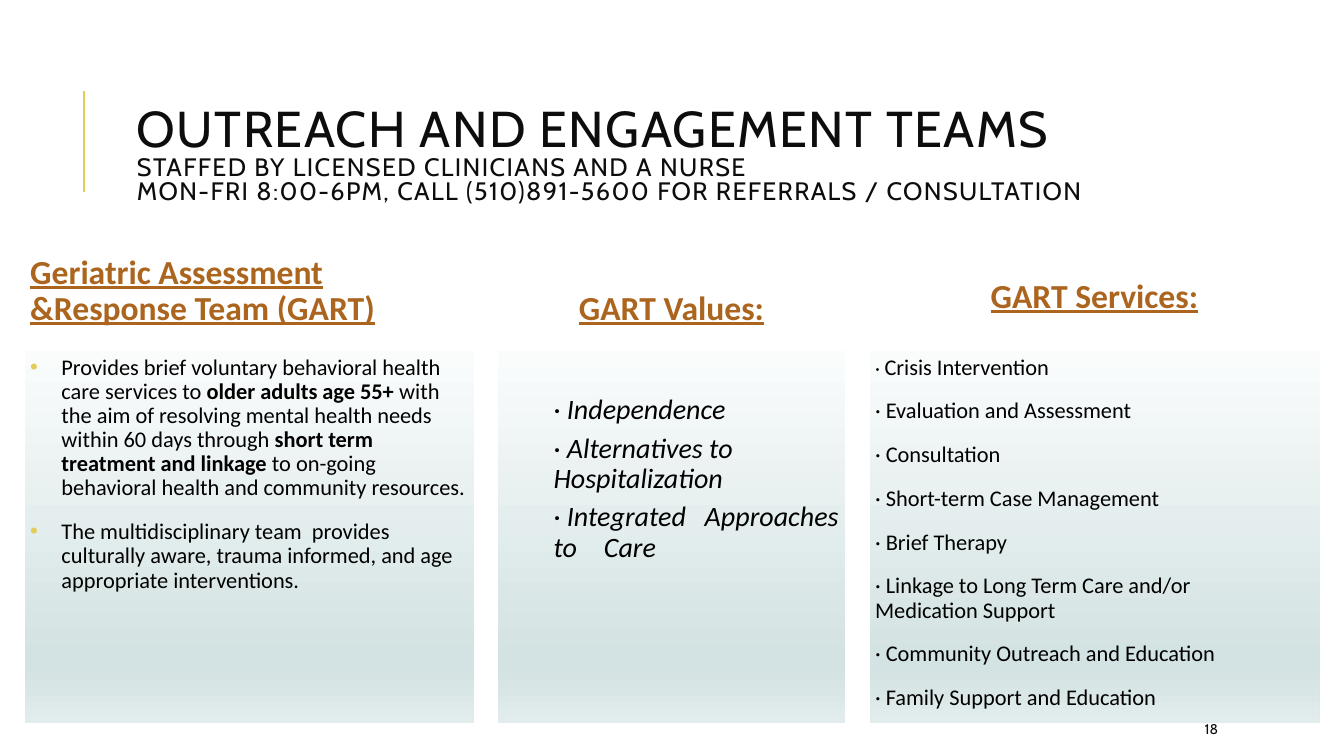
from lxml import etree
from pptx import Presentation
from pptx.dml.color import RGBColor
from pptx.enum.shapes import MSO_CONNECTOR, MSO_SHAPE
from pptx.enum.text import MSO_ANCHOR as Anchor, PP_ALIGN as Align
from pptx.oxml.ns import qn
from pptx.util import Inches, Pt

GOLD, BROWN, INK, BLACK = "E3CC5A", "AB651E", "0D0D0D", "000000"
PANEL_STOPS = [(0, "FAFCFC"), (83, "D3E2E2"), (85, "D3E2E2"), (100, "E2ECEC")]
PANEL_TOP, PANEL_HEIGHT = 3.48, 3.69

TEAM = [
    [("Provides brief voluntary behavioral health care services to ", False),
     ("older adults age 55+ ", True),
     ("with the aim of resolving mental health needs within 60 days through ", False),
     ("short term treatment and linkage", True),
     (" to on-going behavioral health and community resources.", False)],
    [("The multidisciplinary team  provides culturally aware, trauma informed, "
      "and age appropriate interventions.", False)],
]
VALUES = ["Independence", "Alternatives to  \tHospitalization",
          "Integrated \tApproaches to \tCare"]
SERVICES = ["Crisis Intervention", "Evaluation and Assessment", "Consultation",
            "Short-term Case Management", "Brief Therapy",
            "Linkage to Long Term Care and/or \tMedication Support",
            "Community Outreach and Education", "Family Support and Education"]


def color(value):
    return RGBColor.from_string(value)


def set_font(font, size, value, name="Calibri"):
    font.name, font.size = name, Pt(size)
    font.color.rgb = color(value)


def set_frame(frame, anchor, inset=None):
    frame.word_wrap = True
    frame.vertical_anchor = anchor
    if inset is not None:
        frame.margin_left = frame.margin_right = Inches(inset)
        frame.margin_top = frame.margin_bottom = Inches(inset)


def set_spacing(paragraph, before=12, after=2):
    paragraph.line_spacing = 0.9
    paragraph.space_before, paragraph.space_after = Pt(before), Pt(after)


def add_paragraphs(frame, count):
    """Yield the frame's first paragraph, then new ones, up to count."""
    yield frame.paragraphs[0]
    for _ in range(count - 1):
        yield frame.add_paragraph()


def add_text(slide, left, top, width, height, anchor, inset=None):
    box = slide.shapes.add_textbox(*map(Inches, (left, top, width, height)))
    set_frame(box.text_frame, anchor, inset)
    return box.text_frame


def add_title(slide, left, top, width, height):
    rule = slide.shapes.add_connector(
        MSO_CONNECTOR.STRAIGHT, Inches(left - 0.43), Inches(top + 1.33),
        Inches(left - 0.43), Inches(top + 0.33))
    rule.line.color.rgb = color(GOLD)
    rule.line.width = Pt(1.5)
    etree.SubElement(rule._element.spPr, qn("a:effectLst"))

    frame = add_text(slide, left, top, width, height, Anchor.MIDDLE)
    paragraph = frame.paragraphs[0]
    paragraph.line_spacing = 0.8
    lines = [("OUTREACH AND ENGAGEMENT TEAMS", 36),
             ("STAFFED BY LICENSED CLINICIANS AND A NURSE ", 18),
             ("MON-FRI 8:00-6PM, CALL (510)891-5600 FOR REFERRALS / CONSULTATION", 18)]
    for index, (text, size) in enumerate(lines):
        if index:
            paragraph.add_line_break()
        run = paragraph.add_run()
        run.text = text
        set_font(run.font, size, INK, "Cabin")
        run._r.get_or_add_rPr().set("spc", "100")


def add_heading(slide, text, left, top, width, height, align=Align.CENTER):
    frame = add_text(slide, left, top, width, height, Anchor.BOTTOM, 0.05)
    paragraph = frame.paragraphs[0]
    paragraph.text = text
    paragraph.alignment = align
    set_spacing(paragraph)
    set_font(paragraph.font, 24, BROWN)
    paragraph.font.bold = paragraph.font.underline = True


def add_panel(slide, left, width):
    """Add a gradient panel and return its text frame."""
    panel = slide.shapes.add_shape(
        MSO_SHAPE.RECTANGLE,
        *map(Inches, (left, PANEL_TOP, width, PANEL_HEIGHT)))
    panel.shadow.inherit = False
    panel.line.fill.background()
    panel.fill.gradient()
    panel.fill.gradient_angle = 270
    stops = panel._element.spPr.find(".//" + qn("a:gsLst"))
    for stop in list(stops):
        stops.remove(stop)
    for position, value in PANEL_STOPS:
        stop = etree.SubElement(stops, qn("a:gs"), pos=str(position * 1000))
        etree.SubElement(stop, qn("a:srgbClr"), val=value)
    set_frame(panel.text_frame, Anchor.TOP, 0.05)
    return panel.text_frame


def set_indent(paragraph, left, first=0):
    properties = paragraph._p.get_or_add_pPr()
    properties.set("marL", str(Inches(left)))
    properties.set("indent", str(Inches(first)))
    return properties


def add_bullet(paragraph):
    properties = set_indent(paragraph, 0.31, -0.31)
    bullet_color = etree.SubElement(properties, qn("a:buClr"))
    etree.SubElement(bullet_color, qn("a:srgbClr"), val=GOLD)
    etree.SubElement(properties, qn("a:buFont"), typeface="Arial")
    etree.SubElement(properties, qn("a:buChar"), char="•")


def add_team(slide, left, width):
    add_heading(slide, "Geriatric Assessment &Response Team (GART)",
                left, 2.67, width, 0.63, Align.LEFT)
    frame = add_panel(slide, left, width)
    for paragraph, runs in zip(add_paragraphs(frame, len(TEAM)), TEAM):
        paragraph.alignment = Align.LEFT
        set_spacing(paragraph)
        add_bullet(paragraph)
        set_font(paragraph.font, 16, BLACK)
        for text, bold in runs:
            run = paragraph.add_run()
            run.text, run.font.bold = text, bold


def add_dotted_list(frame, items, size, first_dot_size, before, after, indent, italic):
    """Fill the frame with items that each start with a typed middle dot."""
    for index, paragraph in enumerate(add_paragraphs(frame, len(items))):
        paragraph.alignment = Align.LEFT
        set_spacing(paragraph, before, after)
        set_indent(paragraph, indent)
        set_font(paragraph.font, size, BLACK)
        dot, item = paragraph.add_run(), paragraph.add_run()
        dot.text, item.text = "· ", items[index]
        item.font.italic = italic
        if index == 0:
            dot.font.size = Pt(first_dot_size)


def add_values(slide, left, width):
    add_heading(slide, "GART Values:", left, 2.44, width, 0.86)
    frame = add_panel(slide, left, width)
    frame.margin_top = Inches(0.44)
    add_dotted_list(frame, VALUES, 20, 20, 2, 4, 0.5, True)


def add_services(slide, left, width):
    add_heading(slide, "GART Services:", left - 0.08, 2.55, width + 0.15, 0.63)
    frame = add_panel(slide, left, width)
    add_dotted_list(frame, SERVICES, 16, 14, 12, 2, 0, False)


def add_page_number(slide, left, top, width, height):
    frame = add_text(slide, left, top, width, height, Anchor.MIDDLE)
    paragraph = frame.paragraphs[0]
    paragraph.text = "18"
    set_font(paragraph.font, 10, INK, "Cabin")


def main():
    presentation = Presentation()
    presentation.slide_width, presentation.slide_height = Inches(13.33), Inches(7.5)
    slide = presentation.slides.add_slide(presentation.slide_layouts[6])
    add_title(slide, 1.26, 0.57, 9.58, 1.98)
    add_team(slide, 0.25, 4.45)
    add_values(slide, 4.94, 3.44)
    add_services(slide, 8.63, 4.46)
    add_page_number(slide, 11.85, 7.08, 1.06, 0.3)
    presentation.save("out.pptx")


if __name__ == "__main__":
    main()
